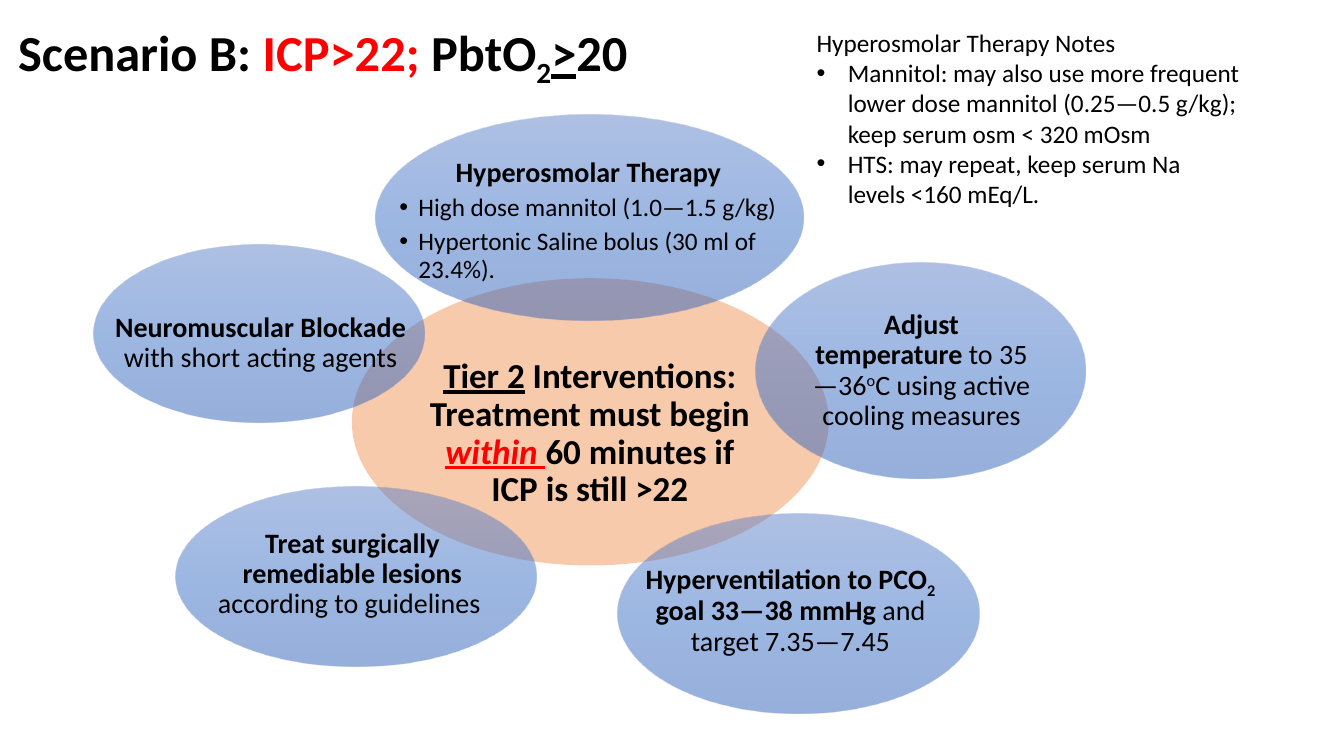
from lxml import etree
from pptx import Presentation
from pptx.dml.color import RGBColor
from pptx.enum import shapes, text
from pptx.oxml import ns
from pptx.util import Inches, Pt

BLACK = RGBColor(0x00, 0x00, 0x00)
RED = RGBColor(0xFF, 0x00, 0x00)
PEACH = RGBColor(0xF7, 0xCA, 0xAC)
BLUES = [(0, RGBColor(0x5E, 0x81, 0xC9)), (50, RGBColor(0x3B, 0x70, 0xC9)),
         (100, RGBColor(0x2E, 0x60, 0xB8))]
FONT = "Calibri"
BASELINES = {"sub": "-25000", "sup": "30000"}

# Each intervention: ellipse box, text box, inset, paragraphs of (text, style words)
INTERVENTIONS = [
    ((3.73, 1.14, 4.24, 2.04), (3.94, 1.31, 3.79, 1.76), 0.02,
     [[("Hyperosmolar Therapy", "bold")],
      [("High dose mannitol (1.0—1.5 g/kg)", "")],
      [("Hypertonic Saline bolus (30 ml of 23.4%).", "")]]),
    ((7.49, 2.61, 3.28, 2.14), (7.98, 2.88, 2.32, 1.6), 0.03,
     [[("Adjust temperature ", "bold"), ("to 35—36", ""), ("o", "sup"),
       ("C using active cooling measures", "")]]),
    ((6.13, 5.1, 3.58, 1.98), (6.35, 5.25, 2.98, 1.6), 0.02,
     [[("Hyperventilation to PCO", "bold"), ("2", "bold sub"),
       (" goal 33—38 mmHg ", "bold"), ("and target 7.35—7.45", "")]]),
    ((1.74, 4.83, 3.58, 1.78), (2, 4.81, 2.99, 1.78), 0.03,
     [[("Treat surgically remediable lesions ", "bold"),
       ("according to guidelines ", "")]]),
    ((0.93, 2.43, 3.28, 1.76), (1.05, 2.75, 3.07, 1.32), 0.02,
     [[("Neuromuscular Blockade ", "bold"), ("with short acting agents", "")]]),
]


def place(sp, box):
    sp.left, sp.top, sp.width, sp.height = map(Inches, box)


def add_runs(p, runs, size):
    for words, style in runs:
        styles = style.split()
        r = p.add_run()
        r.text = words
        r.font.name = FONT
        r.font.size = Pt(size)
        r.font.bold = "bold" in styles
        r.font.italic = "italic" in styles
        r.font.underline = "under" in styles
        r.font.color.rgb = RED if "red" in styles else BLACK
        for name in BASELINES.keys() & set(styles):
            r.font._element.set("baseline", BASELINES[name])


def add_bullet(p, indent):
    pPr = p._p.get_or_add_pPr()
    pPr.set("marL", str(Inches(indent)))
    pPr.set("indent", str(-Inches(indent)))
    etree.SubElement(pPr, ns.qn("a:buFont")).set("typeface", "Arial")
    etree.SubElement(pPr, ns.qn("a:buChar")).set("char", "•")


def add_text(slide, box, paragraphs, sizes, indent, inset=None):
    """First paragraph is a heading; later ones are bullets. An inset centres the text."""
    sp = slide.shapes.add_textbox(*map(Inches, box))
    tf = sp.text_frame
    tf.word_wrap = True
    if inset is not None:
        tf.vertical_anchor = text.MSO_ANCHOR.MIDDLE
        tf.margin_left = tf.margin_right = Inches(inset)
        tf.margin_top = tf.margin_bottom = Inches(inset)
    for i, runs in enumerate(paragraphs):
        p = tf.add_paragraph() if i else tf.paragraphs[0]
        if i:
            add_bullet(p, indent)
        if inset is not None:
            p.line_spacing = 0.9
            if i:
                p.space_before = Pt(4.9)
            else:
                p.alignment = text.PP_ALIGN.CENTER
        add_runs(p, runs, sizes[min(i, 1)])
    return sp


def add_ellipse(slide, box):
    sp = slide.shapes.add_shape(shapes.MSO_SHAPE.OVAL, *map(Inches, box))
    sp.shadow.inherit = False
    sp.line.fill.background()
    return sp


def fill_translucent_blue(sp):
    sp.fill.gradient()
    sp.fill.gradient_angle = 270  # counter-clockwise, so top to bottom
    stops = sp._element.spPr.find(".//" + ns.qn("a:gsLst"))
    for stop in list(stops):
        stops.remove(stop)
    for position, color in BLUES:
        stop = etree.SubElement(stops, ns.qn("a:gs"), pos=str(position * 1000))
        clr = etree.SubElement(stop, ns.qn("a:srgbClr"), val=str(color))
        etree.SubElement(clr, ns.qn("a:alpha"), val="50000")


def add_title(slide):
    title = slide.shapes.title
    place(title, (0.08, 0.08, 9.84, 0.8))
    tf = title.text_frame
    tf.word_wrap = True
    tf.auto_size = text.MSO_AUTO_SIZE.NONE
    tf.vertical_anchor = text.MSO_ANCHOR.BOTTOM
    p = tf.paragraphs[0]
    p.alignment = text.PP_ALIGN.LEFT
    p.line_spacing = 0.9
    add_runs(p, [("Scenario B: ", "bold"), ("ICP>22; ", "bold red"),
                 ("PbtO", "bold"), ("2", "bold sub"), (">", "bold under"),
                 ("20", "bold")], 36)


def main():
    prs = Presentation()
    prs.slide_width, prs.slide_height = Inches(13.33), Inches(7.5)
    slide = prs.slides.add_slide(prs.slide_layouts[5])
    add_title(slide)

    # Central goal
    center = add_ellipse(slide, (3.49, 2.76, 4.73, 2.85))
    center.fill.solid()
    center.fill.fore_color.rgb = PEACH
    goal = [("Tier 2", "bold under"),
            (" Interventions: Treatment must begin ", "bold"),
            ("within ", "bold italic under red"),
            ("60 minutes if ICP is still >22", "bold")]
    add_text(slide, (4.18, 3.15, 3.34, 2.31), [goal], (25, 25), 0, 0.03)

    # Surrounding interventions
    for ellipse_box, text_box, inset, paragraphs in INTERVENTIONS:
        fill_translucent_blue(add_ellipse(slide, ellipse_box))
        add_text(slide, text_box, paragraphs, (20, 18), 0.19, inset)

    # Therapy notes
    notes = [
        "Hyperosmolar Therapy Notes",
        "Mannitol: may also use more frequent lower dose mannitol "
        "(0.25—0.5 g/kg); keep serum osm < 320 mOsm",
        "HTS: may repeat, keep serum Na levels <160 mEq/L.",
    ]
    add_text(slide, (8, 0.22, 4.41, 1.92), [[(note, "")] for note in notes],
             (18, 18), 0.31)
    prs.save("out.pptx")


if __name__ == "__main__":
    main()
